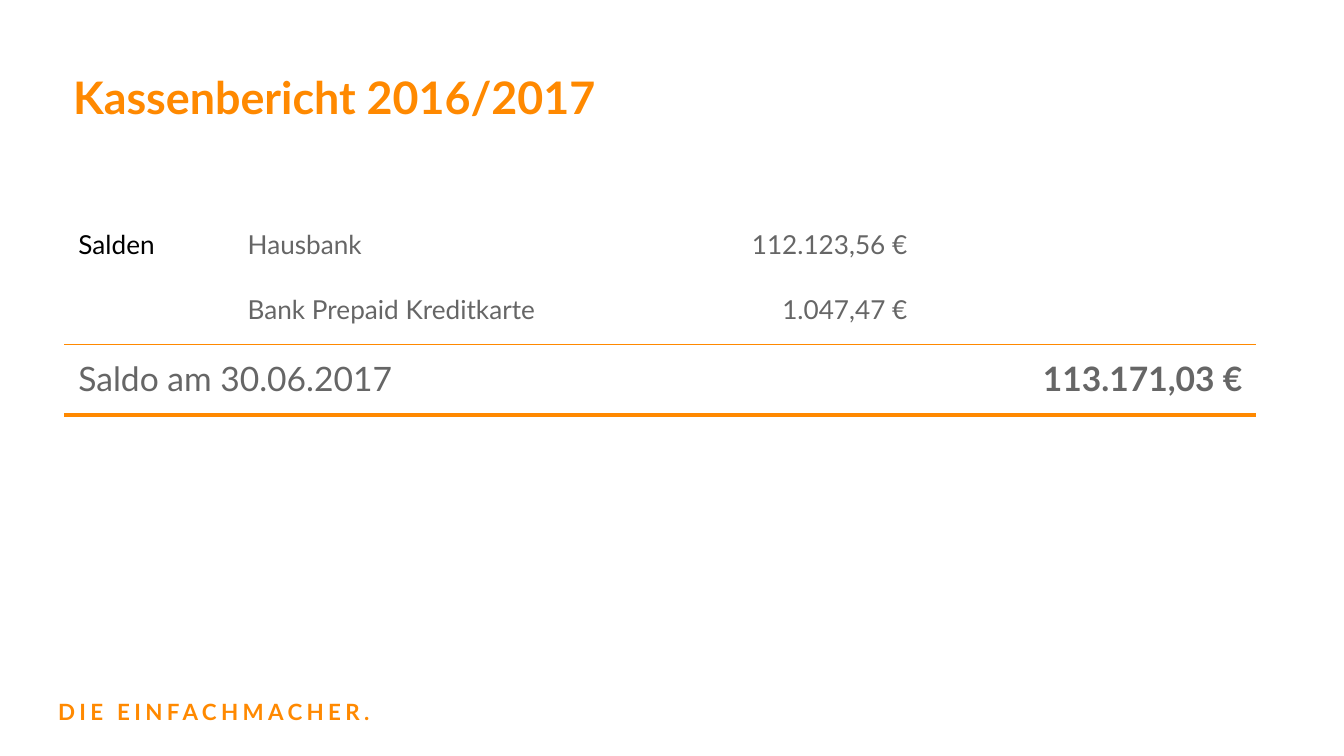
from lxml.etree import SubElement as Sub
from pptx import Presentation
from pptx.dml.color import RGBColor
from pptx.enum.text import MSO_ANCHOR as Anchor, PP_ALIGN as Align
from pptx.oxml.ns import qn
from pptx.util import Pt

ORANGE, GREY, BLACK = "FF8900", "666666", "000000"
INSET = 7.2


def paint(color, code):
    color.rgb = RGBColor.from_string(code)


def write(par, text, size, code, bold=False):
    run = par.add_run()
    run.text = text
    font = run.font
    font.name, font.size, font.bold = "Lato", Pt(size), bold
    paint(font.color, code)
    return run


def pad(part, inset):
    part.margin_left = part.margin_right = Pt(inset)
    part.margin_top = part.margin_bottom = Pt(inset)


def frame(shape):
    body = shape.text_frame
    body.word_wrap = True
    body.vertical_anchor = Anchor.TOP
    pad(body, INSET)
    return body.paragraphs[0]


def rule(cell, side, width):
    line = Sub(cell._tc.get_or_add_tcPr(), qn(f"a:{side}"), w=str(Pt(width)))
    fill = Sub(line, qn("a:solidFill"))
    Sub(fill, qn("a:srgbClr"), val=ORANGE)


def add_title(slide, x, y, w, h):
    title = slide.shapes.title
    title.left, title.top, title.width, title.height = map(Pt, (x, y, w, h))
    par = frame(title)
    par.alignment, par.line_spacing = Align.LEFT, 1.15
    write(par, "Kassenbericht 2016/2017", 24, ORANGE, True)


def add_slogan(slide, x, y, w, h):
    box = slide.shapes.add_textbox(*map(Pt, (x, y, w, h)))
    run = write(frame(box), "DIE EINFACHMACHER.", 12, ORANGE, True)
    # Wide letter spacing, in hundredths of a point
    run.font._element.set("spc", "232")


def add_report(slide, x, y, cols, rows):
    # Each entry: text, size, colour, bold
    data = [
        [("Salden", 14, BLACK), ("Hausbank", 14, GREY), ("112.123,56 €", 14, GREY), None],
        [None, ("Bank Prepaid Kreditkarte", 14, GREY), ("1.047,47 €", 14, GREY), None],
        [("Saldo am 30.06.2017", 18, GREY), None, None, ("113.171,03 €", 18, GREY, True)],
    ]
    # Lines above and below the total
    rules = [[], [("lnB", 0.75)], [("lnT", 0.75), ("lnB", 2.25)]]
    table = slide.shapes.add_table(
        len(rows), len(cols), Pt(x), Pt(y), Pt(sum(cols)), Pt(sum(rows))).table
    table.first_row = table.horz_banding = False
    for col, width in zip(table.columns, cols):
        col.width = Pt(width)
    for row, height in zip(table.rows, rows):
        row.height = Pt(height)
    for r, items in enumerate(data):
        for c, item in enumerate(items):
            cell = table.cell(r, c)
            for side, width in rules[r]:
                rule(cell, side, width)
            cell.fill.background()
            pad(cell, INSET if item else 0)
            if item:
                par = cell.text_frame.paragraphs[0]
                par.alignment = Align.RIGHT if c > 1 else Align.LEFT
                write(par, *item)
    table.cell(2, 0).merge(table.cell(2, 2))


def main():
    deck = Presentation()
    deck.slide_width, deck.slide_height = Pt(720), Pt(405)
    slide = deck.slides.add_slide(deck.slide_layouts[5])
    add_slogan(slide, 24, 367, 223, 30)
    add_title(slide, 32, 26, 662, 46)
    add_report(slide, 34.8, 115.2, [90.7, 228.2, 139.7, 179.3], [34.7, 34.7, 37.8])
    deck.save("out.pptx")


if __name__ == "__main__":
    main()
